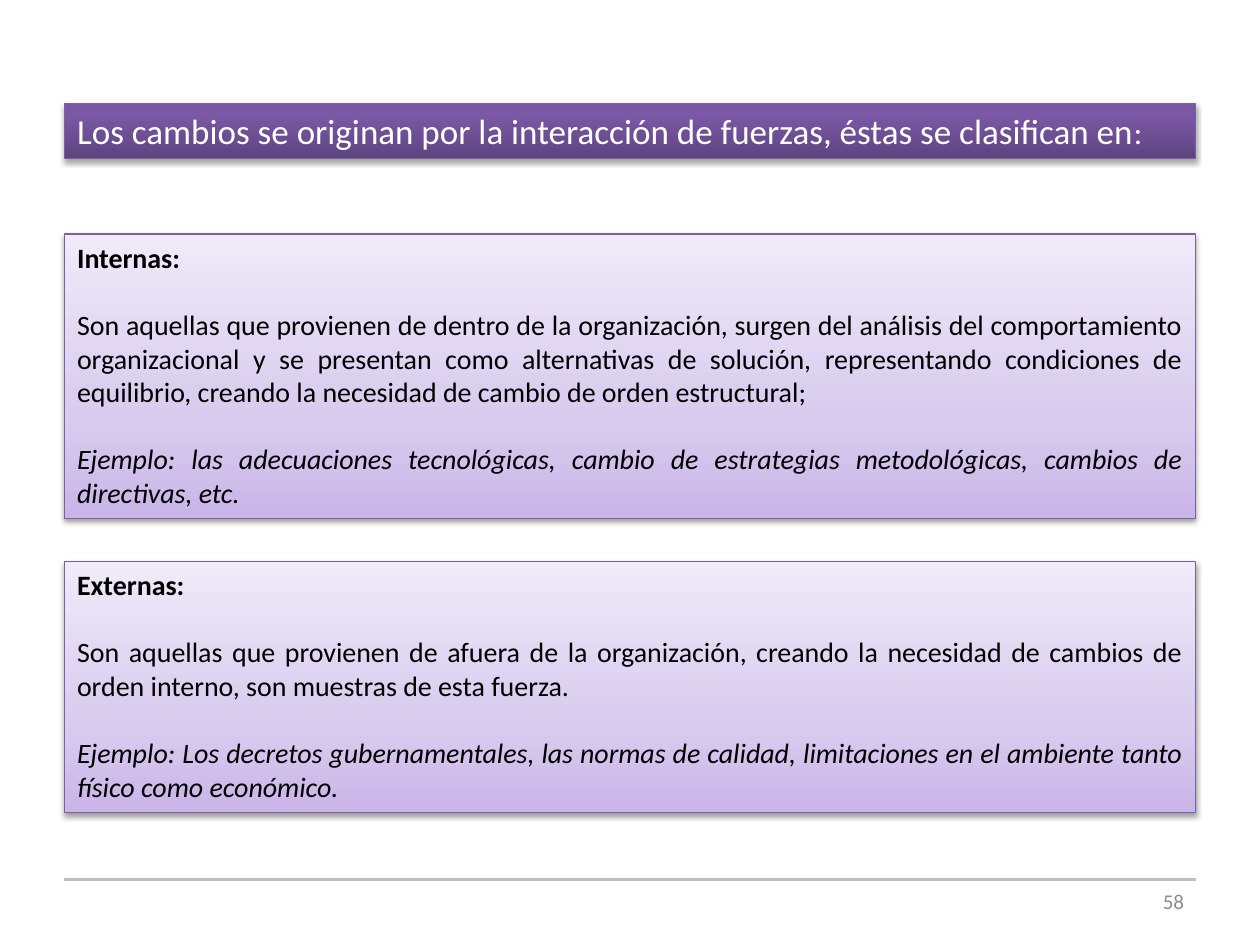
from pptx import Presentation
from pptx.dml.color import RGBColor
from pptx.enum.shapes import MSO_CONNECTOR
from pptx.enum.text import MSO_ANCHOR, MSO_AUTO_SIZE, PP_ALIGN
from pptx.oxml import parse_xml
from pptx.oxml.ns import nsdecls
from pptx.util import Cm, Pt

WHITE = RGBColor(0xFF, 0xFF, 0xFF)
BLACK = RGBColor(0, 0, 0)
GREY = RGBColor(0x8C, 0x8C, 0x8C)
RULE = RGBColor(0xBF, 0xBF, 0xBF)
EDGE = RGBColor(0x7D, 0x60, 0xA0)
DARK = [(0, RGBColor(0x5F, 0x44, 0x80)), (80, RGBColor(0x7B, 0x58, 0xA6)),
        (100, RGBColor(0x7C, 0x57, 0xA8))]
PALE = [(0, RGBColor(0xC9, 0xB5, 0xE8)), (35, RGBColor(0xD8, 0xCB, 0xEE)),
        (100, RGBColor(0xF0, 0xEA, 0xF9))]

LEFT, WIDTH = Cm(1.3), Cm(22.8)
GAP = Pt(19.2)  # about one line of 16 pt text

INNER = [
    "Internas:",
    "Son aquellas que provienen de dentro de la organización, surgen del análisis "
    "del comportamiento organizacional y se presentan como alternativas de solución, "
    "representando condiciones de equilibrio, creando la necesidad de cambio de orden "
    "estructural;",
    "Ejemplo: las adecuaciones tecnológicas, cambio de estrategias metodológicas, "
    "cambios de directivas, etc.",
]
OUTER = [
    "Externas:",
    "Son aquellas que provienen de afuera de la organización, creando la necesidad de "
    "cambios de orden interno, son muestras de esta fuerza.",
    "Ejemplo: Los decretos gubernamentales, las normas de calidad, limitaciones en el "
    "ambiente tanto físico como económico.",
]
STYLES = [{"bold": True}, {}, {"italic": True}]


def write(para, text, size, color, **style):
    run = para.add_run()
    run.text = text
    run.font.color.rgb = color
    look = {"name": "Calibri", "size": Pt(size), **style}
    for key, value in look.items():
        setattr(run.font, key, value)


def place(shape, box):
    for key, value in zip(("left", "top", "width", "height"), box):
        setattr(shape, key, value)


def paint(shape, stops, alpha, drop):
    """Give the shape an upward gradient, a thin edge and a soft shadow."""
    marks = "".join(f'<a:gs pos="{pos * 1000}"><a:srgbClr val="{color}"/></a:gs>'
                    for pos, color in stops)
    props = shape.element.spPr
    props.append(parse_xml(
        f'<a:gradFill {nsdecls("a")} rotWithShape="1"><a:gsLst>{marks}</a:gsLst>'
        '<a:lin ang="16200000" scaled="0"/></a:gradFill>'))
    shape.line.color.rgb = EDGE
    shape.line.width = Pt(0.75)
    props.append(parse_xml(
        f'<a:effectLst {nsdecls("a")}><a:outerShdw blurRad="40000" dist="{drop}" '
        'dir="5400000" rotWithShape="0"><a:srgbClr val="000000">'
        f'<a:alpha val="{alpha * 1000}"/></a:srgbClr></a:outerShdw></a:effectLst>'))


def frame(shape, anchor):
    """Set up a text frame that keeps the size of its box."""
    text = shape.text_frame
    look = {"word_wrap": True, "vertical_anchor": anchor,
            "auto_size": MSO_AUTO_SIZE.NONE}
    for key, value in look.items():
        setattr(text, key, value)
    return text


def header(shape, box):
    place(shape, box)
    paint(shape, DARK, 35, 23000)
    para = frame(shape, MSO_ANCHOR.TOP).paragraphs[0]
    para.alignment = PP_ALIGN.LEFT
    write(para, "Los cambios se originan por la interacción de fuerzas, "
                "éstas se clasifican en", 20, WHITE)
    write(para, ":", 18, WHITE)


def panel(shape, box, texts):
    """Fill a body box with a heading, a definition and an example."""
    place(shape, box)
    paint(shape, PALE, 38, 20000)
    text = frame(shape, MSO_ANCHOR.TOP)
    for i, (words, style) in enumerate(zip(texts, STYLES)):
        para = text.add_paragraph() if i else text.paragraphs[0]
        para.alignment = PP_ALIGN.JUSTIFY
        para.space_before = GAP if i else Pt(0)
        props = para._p.get_or_add_pPr()
        props.set("marL", "0")
        props.set("indent", "0")
        props.append(parse_xml(f'<a:buNone {nsdecls("a")}/>'))
        write(para, words, 16, BLACK, **style)


def footer(slide, box):
    left, top, width, height = box
    rule = slide.shapes.add_connector(MSO_CONNECTOR.STRAIGHT, left, top, left + width, top)
    rule.line.color.rgb = RULE
    rule.line.width = Pt(2)
    rule.element.spPr.append(parse_xml(f'<a:effectLst {nsdecls("a")}/>'))
    wide = Cm(5.92)
    page = slide.shapes.add_textbox(left + width - wide + Cm(0.02), top - Cm(0.08),
                                    wide, height)
    para = frame(page, MSO_ANCHOR.MIDDLE).paragraphs[0]
    para.alignment = PP_ALIGN.RIGHT
    write(para, "58", 12, GREY)


def main():
    deck = Presentation()
    deck.slide_width, deck.slide_height = Cm(25.4), Cm(19.05)
    slide = deck.slides.add_slide(deck.slide_layouts.get_by_name("Two Content"))
    title, first, second = slide.placeholders
    header(title, (LEFT, Cm(2.08), WIDTH, Cm(1.11)))
    panel(first, (LEFT, Cm(4.72), WIDTH, Cm(5.73)), INNER)
    panel(second, (LEFT, Cm(11.32), WIDTH, Cm(5.06)), OUTER)
    footer(slide, (LEFT, Cm(17.73), WIDTH, Cm(1.02)))
    deck.save("out.pptx")


if __name__ == "__main__":
    main()
